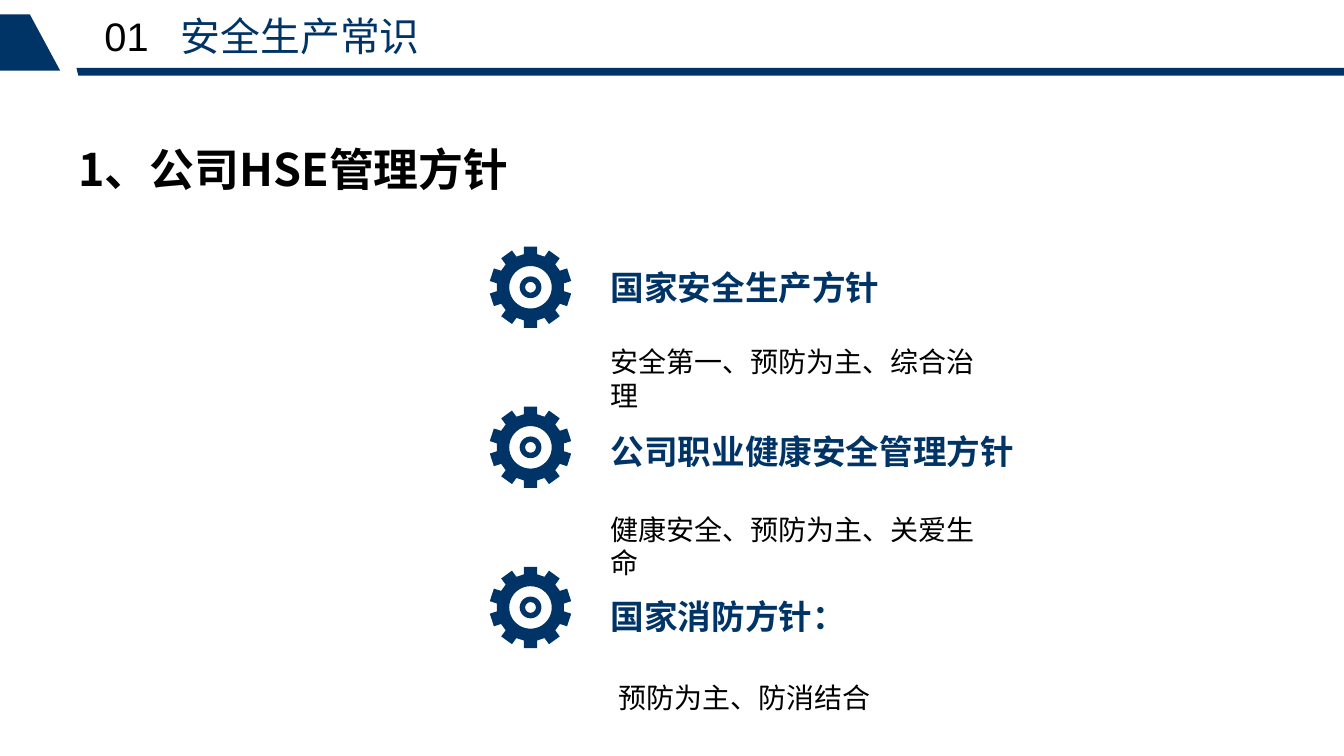
import math
from lxml import etree
from pptx import Presentation
from pptx import util as u
from pptx.dml.color import RGBColor
from pptx.enum import shapes, text
from pptx.oxml.ns import qn

Pt = u.Pt
NAVY, BLACK = "003366", "000000"
CJK = "Noto Sans CJK SC"


def paint(sp, color):
    sp.shadow.inherit = False
    sp.fill.solid()
    sp.fill.fore_color.rgb = RGBColor.from_string(color)
    sp.line.fill.background()


def add_text(x, y, w, h, parts, size, bold=False, inset=7.2):
    tf = s.shapes.add_textbox(Pt(x), Pt(y), Pt(w), Pt(h)).text_frame
    tf.word_wrap = True
    tf.margin_left = tf.margin_right = Pt(inset)
    tf.margin_top = tf.margin_bottom = Pt(inset / 2)
    p = tf.paragraphs[0]
    for content, font, color in parts:
        r = p.add_run()
        r.text = content
        r.font.name, r.font.size, r.font.bold = font, Pt(size), bold
        r.font.color.rgb = RGBColor.from_string(color)
        etree.SubElement(r.font._element, qn("a:ea")).set("typeface", font)
    return tf


prs = Presentation()
prs.slide_width, prs.slide_height = Pt(1012.32), Pt(569.52)
s = prs.slides.add_slide(prs.slide_layouts[6])

tf = add_text(51.8, 103, 526.3, 48.2, [("1、公司HSE管理方针", CJK, BLACK)], 33.8, True)
tf.vertical_anchor = text.MSO_ANCHOR.MIDDLE

cx, first_cy, pitch = 399.6, 216.4, 120.6
tip, half_tooth, root, hole, ring = 30.6, 5, 25.4, 16, 16.4
root_depth = math.sqrt(root ** 2 - half_tooth ** 2)
tooth = [(-half_tooth, root_depth), (-half_tooth, tip), (half_tooth, tip), (half_tooth, root_depth)]
angles = [math.radians(36 * i) for i in range(10)]
teeth = [(x * math.cos(a) + y * math.sin(a), x * math.sin(a) - y * math.cos(a))
         for a in angles for x, y in tooth]
bore = [(hole * math.cos(math.radians(d)), -hole * math.sin(math.radians(d)))
        for d in range(0, 360, 5)]

for i in range(3):
    cy = first_cy + pitch * i
    g = s.shapes.add_group_shape()
    outline, opening = [[(Pt(cx + x), Pt(cy + y)) for x, y in pts] for pts in (teeth, bore)]
    fb = g.shapes.build_freeform(*outline[0])
    fb.add_line_segments(outline[1:], close=True)
    fb.move_to(*opening[0])
    fb.add_line_segments(opening[1:], close=True)
    paint(fb.convert_to_shape(), NAVY)
    sp = g.shapes.add_shape(shapes.MSO_SHAPE.DONUT, Pt(cx - ring / 2), Pt(cy - ring / 2),
                            Pt(ring), Pt(ring))
    paint(sp, NAVY)

policies = [
    ("国家安全生产方针", 197.3, "安全第一、预防为主、综合治理", 452.9, 256.3),
    ("公司职业健康安全管理方针", 321.1, "健康安全、预防为主、关爱生命", 452.9, 382.3),
    ("国家消防方针：", 445, "预防为主、防消结合", 458.6, 509),
]
for heading, heading_y, motto, motto_x, motto_y in policies:
    add_text(452.9, heading_y, 330, 38.2, [(heading, CJK, NAVY)], 25.3, True)
    add_text(motto_x, motto_y, 300, 32.4, [(motto, CJK, BLACK)], 21.1)

header_shapes = [
    [(0, 10.8), (22.5, 10.8), (45.4, 53.3), (0, 53.3)],
    [(57.6, 51.1), (1012.32, 51.1), (1012.32, 56.9), (59, 56.9)],
]
for pts in header_shapes:
    pts = [(Pt(x), Pt(y)) for x, y in pts]
    fb = s.shapes.build_freeform(*pts[0])
    fb.add_line_segments(pts[1:], close=True)
    paint(fb.convert_to_shape(), NAVY)

tf = add_text(78.7, 8.6, 616.7, 36, [("01\t", "Arial", BLACK), ("安全生产常识", CJK, NAVY)], 30, inset=0)
tabs = etree.SubElement(tf.paragraphs[0]._p.get_or_add_pPr(), qn("a:tabLst"))
etree.SubElement(tabs, qn("a:tab"), pos=str(Pt(57.6)), algn="l")

prs.save("out.pptx")
